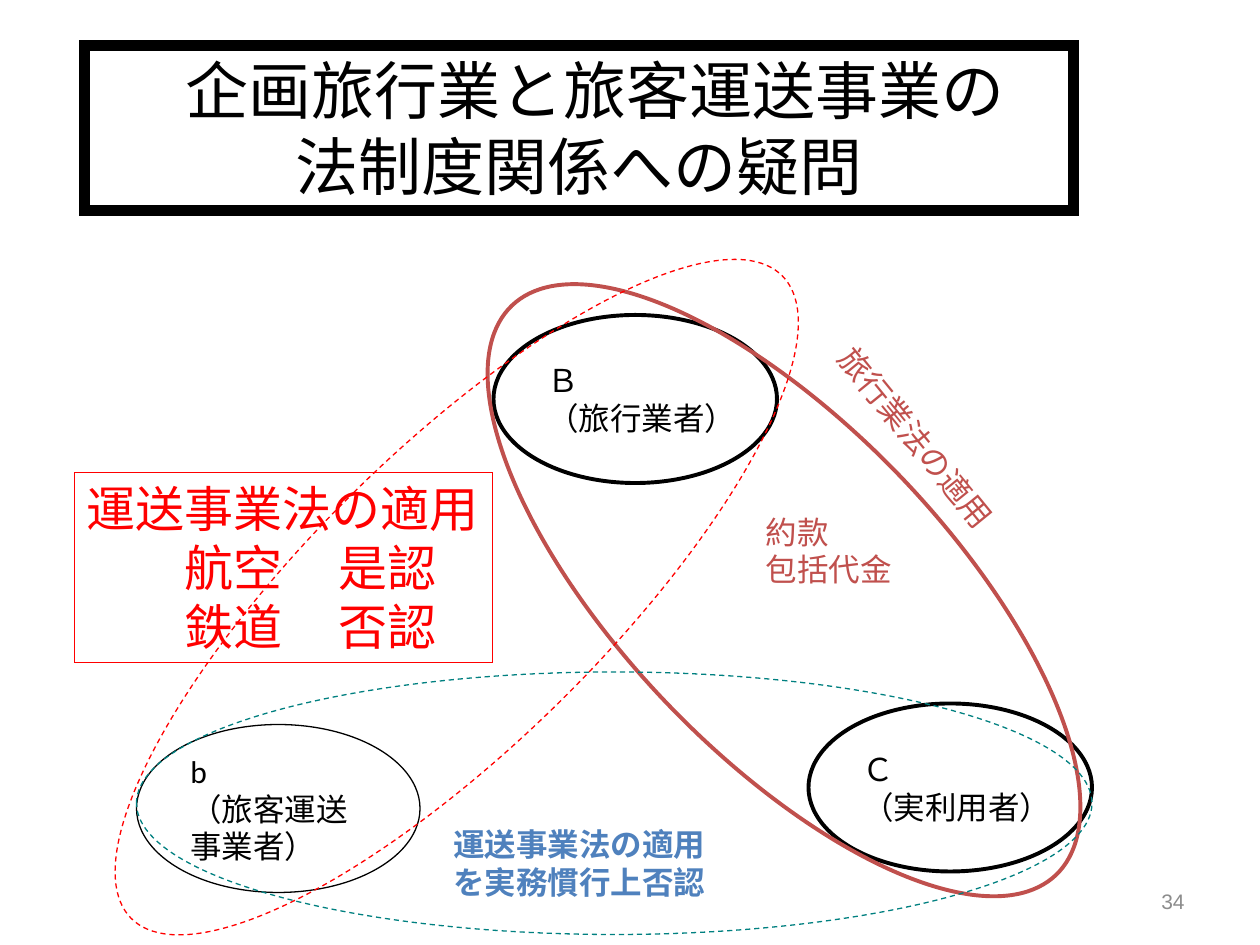
"""Build the slide on travel business and passenger transport law."""
from lxml import etree
from pptx import Presentation
from pptx.dml.color import RGBColor
from pptx.enum import dml, shapes, text
from pptx.oxml import ns
from pptx.util import Pt

BLACK, RED, BRICK = "000000", "FF0000", "C0504D"
TEAL, BLUE, GREY = "008080", "4F81BD", "8C8C8C"
OVAL, RECT = shapes.MSO_SHAPE.OVAL, shapes.MSO_SHAPE.RECTANGLE
LEFT, CENTER, RIGHT = text.PP_ALIGN.LEFT, text.PP_ALIGN.CENTER, text.PP_ALIGN.RIGHT
TOP, MIDDLE = text.MSO_ANCHOR.TOP, text.MSO_ANCHOR.MIDDLE

PARTY_SIZE = (162, 96)
PARTIES = [
    ((282, 180), 2.25, ["Ｂ", "（旅行業者）"]),
    ((78, 414), 0.75, ["b", "（旅客運送\v事業者）"]),
    ((462, 402), 2.25, ["Ｃ", "（実利用者）"]),
]
RELATIONS = [
    ((355, 112.3, 186, 450), 316.3, BRICK, 2.25, False),
    ((177.1, 79.9, 167.8, 522.7), 45.4, RED, 0.75, True),
    ((78, 384, 546, 150), 0, TEAL, 0.75, True),
]
LABELS = [
    ((442.8, 250.6, 182.2, 36), 50.8, BRICK, False, ["旅行業法の適用"]),
    ((252, 468, 206.6, 64.8), 0, BLUE, True, ["運送事業法の適用", "を実務慣行上否認"]),
    ((430.6, 289.4, 110.2, 64.8), 0, BRICK, False, ["約款", "包括代金"]),
]
TITLE = ["企画旅行業と旅客運送事業の", "法制度関係への疑問"]
TRANSPORT_LAW = ["運送事業法の適用", "航空\t是認", "鉄道\t否認"]
MODE_INDENT, VERDICT_TAB = 56, 166


def color(value):
    return RGBColor.from_string(value)


def add_outline(page, kind, box, ink, weight, dashed=False, turn=0):
    shape = page.shapes.add_shape(kind, *map(Pt, box))
    shape.shadow.inherit = False
    shape.fill.background()
    shape.line.color.rgb = color(ink)
    shape.line.width = Pt(weight)
    if dashed:
        shape.line.dash_style = dml.MSO_LINE.DASH
    outline = shape._element.spPr.find(ns.qn("a:ln"))
    etree.SubElement(outline, ns.qn("a:miter"), lim="800000")
    shape.rotation = turn
    return shape


def write(shape, lines, ink, size=18, bold=False, align=LEFT, anchor=TOP,
          wrap=True, indents=(), font="Calibri"):
    frame = shape.text_frame
    frame.word_wrap = wrap
    frame.vertical_anchor = anchor
    frame.text = "\n".join(lines)
    for para in frame.paragraphs:
        para.alignment = align
        para.font.name = font
        para.font.size = Pt(size)
        para.font.bold = bold
        para.font.color.rgb = color(ink)
    for para, indent in zip(frame.paragraphs, indents):
        props = para._p.get_or_add_pPr()
        props.set("marL", "0")
        props.set("indent", str(Pt(indent)))


def set_tab(para, position):
    props = para._p.get_or_add_pPr()
    stops = etree.Element(ns.qn("a:tabLst"))
    etree.SubElement(stops, ns.qn("a:tab"), pos=str(Pt(position)), algn="l")
    props.find(ns.qn("a:defRPr")).addprevious(stops)


def add_label(page, box, lines, ink, turn=0, **style):
    label = page.shapes.add_textbox(*map(Pt, box))
    label.rotation = turn
    write(label, lines, ink, **style)


def main():
    deck = Presentation()
    deck.slide_width, deck.slide_height = Pt(720), Pt(540)
    page = deck.slides.add_slide(deck.slide_layouts[6])

    add_label(page, (516, 500.5, 168, 28.8), ["34"], GREY, size=12,
              align=RIGHT, anchor=MIDDLE, font="Arial")
    title = add_outline(page, RECT, (48.2, 26, 565.2, 94.3), BLACK, 6)
    write(title, TITLE, BLACK, size=36, align=CENTER, indents=(18, 0))

    for place, weight, lines in PARTIES:
        party = add_outline(page, OVAL, place + PARTY_SIZE, BLACK, weight)
        write(party, lines, BLACK, anchor=MIDDLE, wrap=False)
    for box, turn, ink, weight, dashed in RELATIONS:
        add_outline(page, OVAL, box, ink, weight, dashed, turn)

    law = add_outline(page, RECT, (42.5, 270, 239, 108.7), RED, 0.75)
    write(law, TRANSPORT_LAW, RED, size=28, indents=(0, MODE_INDENT, MODE_INDENT))
    for para in law.text_frame.paragraphs[1:]:
        set_tab(para, VERDICT_TAB)
    for box, turn, ink, bold, lines in LABELS:
        add_label(page, box, lines, ink, turn, bold=bold)

    deck.save("out.pptx")


if __name__ == "__main__":
    main()
